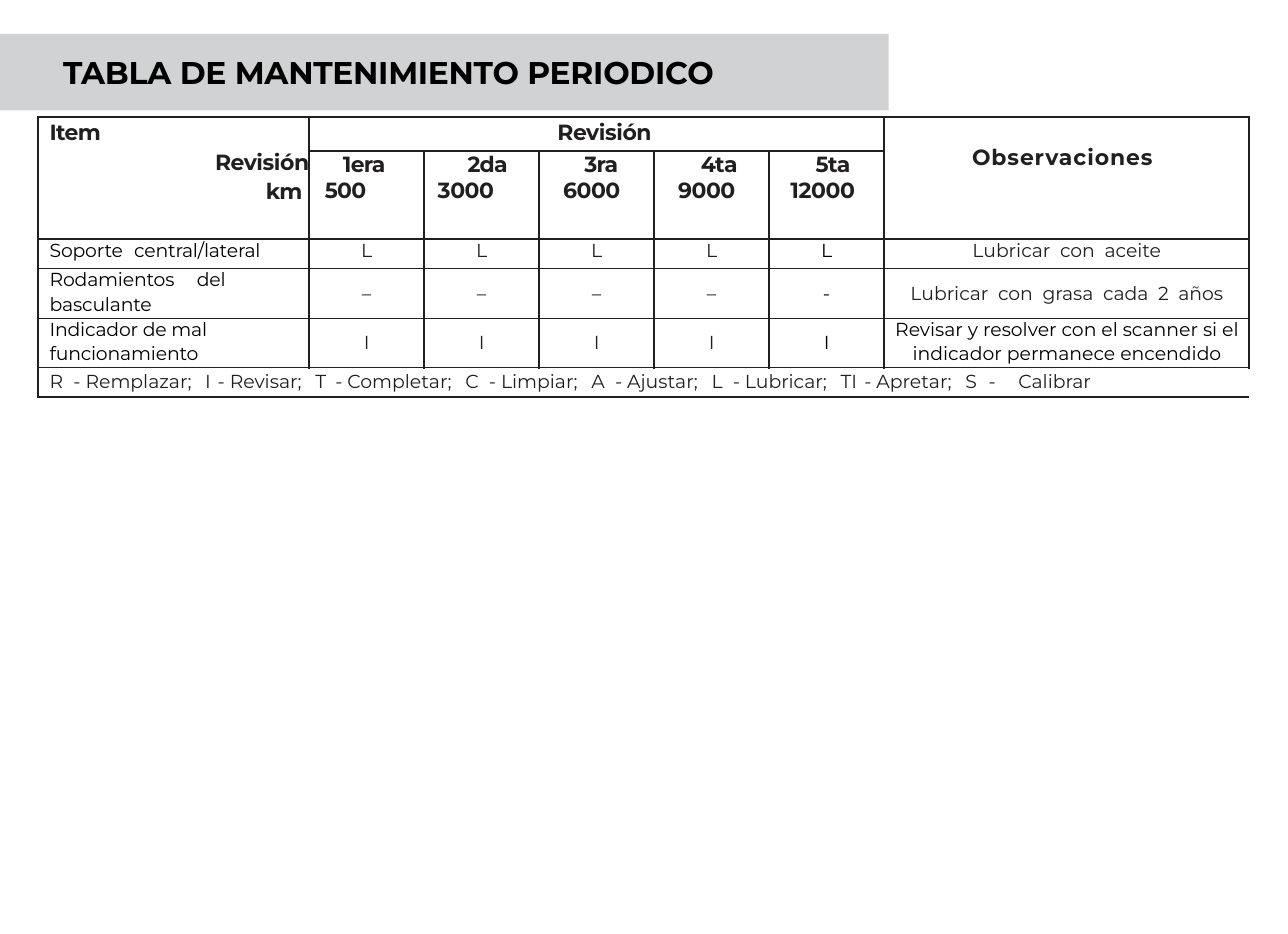
from lxml.etree import SubElement
from pptx import Presentation
from pptx.dml.color import RGBColor
from pptx.enum.shapes import MSO_SHAPE
from pptx.enum.text import MSO_ANCHOR, PP_ALIGN
from pptx.oxml.ns import qn
from pptx.util import Inches, Pt

BLACK = RGBColor(0x00, 0x00, 0x00)
INK = RGBColor(0x22, 0x1F, 0x1F)
BAND_GRAY = RGBColor(0xD1, 0xD2, 0xD3)
FONT = "Montserrat"
NO_GRID_STYLE = "{2D5ABB26-0587-4C30-8999-92F81FD0307C}"
LEFT, CENTER, RIGHT = PP_ALIGN.LEFT, PP_ALIGN.CENTER, PP_ALIGN.RIGHT

W, H = Inches(5.71), Inches(4.14)
COLS = [1.2] + [0.51] * 5 + [1.62]
ROWS = [0.15, 0.38, 0.13, 0.22, 0.22, 0.13]
COL_EDGES = [0.75, 0.75, 0.5, 0.5, 0.75, 0.75, 0.75, 0.75]
ROW_EDGES = [0.75, 0.75, 0.75, 0.5, 0.5, 0.5, 0.5]
MERGES = [((0, 0), (1, 0)), ((0, 1), (0, 5)), ((0, 6), (1, 6)), ((5, 0), (5, 6))]

REVISIONS = [
    ("2da", 0.14, "3000", 0.2),
    ("3ra", 0.16, "6000", 0.15),
    ("4ta", 0.14, "9000", 0.15),
    ("5ta", 0.15, "12000", 0.13),
]
ITEMS = [
    (["Soporte central/lateral"], 2, "LLLLL", ["Lubricar con aceite"], 1.5),
    (["Rodamientos del", "basculante"], 5.6, "––––-",
     ["Lubricar con grasa cada 2 años"], 1.5),
    (["Indicador de mal", "funcionamiento"], 0, "IIIII",
     ["Revisar y resolver con el scanner si el", "indicador permanece encendido"], 0),
]
LEGEND = [
    ("R", 1.7, "Remplazar;"), ("I", 0.6, "Revisar;"), ("T", 1.4, "Completar;"),
    ("C", 1.7, "Limpiar;"), ("A", 1.7, "Ajustar;"), ("L", 1.7, "Lubricar;"),
    ("TI", 0.8, "Apretar;"), ("S", 2.2, "Calibrar"),
]


def spaced(text, gap, spacing=0):
    if not gap:
        return [(text, spacing)]
    first, *rest = text.split(" ")
    runs = [(first, spacing)]
    for word in rest:
        runs += [(" ", gap), (word, spacing)]
    return runs


def write_line(p, runs, size, color=INK, bold=False, align=LEFT, left=0, right=0):
    p.alignment = align
    p.font.name, p.font.size, p.font.bold = FONT, Pt(size), bold
    p.font.color.rgb = color
    pPr = p._p.get_or_add_pPr()
    pPr.set("marL", str(Inches(left)))
    pPr.set("marR", str(Inches(right)))
    pPr.set("indent", "0")
    for text, spacing in runs:
        r = p.add_run()
        r.text = text
        r._r.get_or_add_rPr().set("spc", str(round(spacing * 100)))


def write_cell(cell, lines, size, top=0, before=0, pitch=None, **style):
    cell.margin_top = Inches(top)
    tf = cell.text_frame
    for i, (runs, own) in enumerate(lines):
        p = tf.add_paragraph() if i else tf.paragraphs[0]
        write_line(p, runs, size, **{**style, **own})
        if i:
            p.space_before = Pt(before)
            if pitch:
                p.line_spacing = Pt(pitch)


def draw_edge(cell, side, width):
    ln = SubElement(cell._tc.get_or_add_tcPr(), qn(f"a:ln{side}"), w=str(Pt(width)))
    fill = SubElement(ln, qn("a:solidFill"))
    SubElement(fill, qn("a:srgbClr"), val=str(INK))


def outline(table, row, col):
    origin = table.cell(row, col)
    merged = origin.is_merge_origin
    last_row = row + (origin.span_height if merged else 1) - 1
    last_col = col + (origin.span_width if merged else 1) - 1
    for r in range(row, last_row + 1):
        for c in range(col, last_col + 1):
            cell = table.cell(r, c)
            for side, on_edge, width in (
                ("L", c == col, COL_EDGES[c]),
                ("R", c == last_col, COL_EDGES[c + 1]),
                ("T", r == row, ROW_EDGES[r]),
                ("B", r == last_row, ROW_EDGES[r + 1]),
            ):
                if on_edge:
                    draw_edge(cell, side, width)
            cell.fill.background()


def add_grid(slide):
    frame = slide.shapes.add_table(len(ROWS), len(COLS), Inches(0.17), Inches(0.52),
                                   Inches(sum(COLS)), Inches(sum(ROWS)))
    frame.element.find(".//" + qn("a:tableStyleId")).text = NO_GRID_STYLE
    table = frame.table
    table.first_row = table.horz_banding = False
    for column, width in zip(table.columns, COLS):
        column.width = Inches(width)
    for row, height in zip(table.rows, ROWS):
        row.height = Inches(height)
    for start, end in MERGES:
        table.cell(*start).merge(table.cell(*end))
    for r in range(len(ROWS)):
        for c in range(len(COLS)):
            cell = table.cell(r, c)
            cell.margin_left = cell.margin_right = 0
            cell.margin_top = cell.margin_bottom = 0
            if not cell.is_spanned:
                outline(table, r, c)
    return table


def fill_header(table):
    head = dict(size=7, bold=True)
    write_cell(table.cell(0, 0), [
        ([("Item", -0.2)], dict(left=0.05)),
        ([("Revisión", -0.1)], dict(align=RIGHT)),
        ([("km", -0.2)], dict(align=RIGHT, right=0.03)),
    ], top=0.01, before=0.9, **head)
    write_cell(table.cell(0, 1), [([("Revisión", -0.1)], {})],
               top=0.01, align=CENTER, left=0.07, **head)
    write_cell(table.cell(0, 6), [([("Observaciones", 0.3)], {})],
               top=0.12, left=0.39, **head)
    write_cell(table.cell(1, 1), [
        ([("1era", -0.2)], dict(left=0.15)),
        ([("500", -0.2)], dict(left=0.07)),
    ], **head)
    for col, (name, name_right, km, km_right) in enumerate(REVISIONS, start=2):
        write_cell(table.cell(1, col), [
            ([(name, -0.2)], dict(right=name_right)),
            ([(km, -0.1)], dict(right=km_right)),
        ], align=RIGHT, **head)


def fill_items(table):
    for row, (names, name_gap, marks, notes, note_gap) in enumerate(ITEMS, start=2):
        top = 0.06 if len(names) > 1 else 0
        body = dict(size=6, before=0.9, pitch=6.9)
        write_cell(table.cell(row, 0), [(spaced(n, name_gap, -0.05), {}) for n in names],
                   color=BLACK, left=0.05, **body)
        for col, mark in enumerate(marks, start=1):
            write_cell(table.cell(row, col), [([(mark, 0)], {})], top=top, align=CENTER,
                       color=BLACK if col == 5 else INK, **body)
        write_cell(table.cell(row, 6), [(spaced(n, note_gap), {}) for n in notes],
                   top=0 if len(notes) > 1 else top, align=CENTER,
                   color=BLACK if len(notes) > 1 else INK, **body)


def fill_legend(table):
    runs = []
    for code, gap, action in LEGEND:
        if runs:
            runs.append((" ", 2.8))
        dash_gap = 5.6 if code == "S" else 0
        runs += [(code, 0), (" ", gap), ("-", 0), (" ", dash_gap), (action, 0)]
    write_cell(table.cell(5, 0), [(runs, {})], size=6, top=0.01, left=0.05)


def add_title(slide, text):
    top, height = Inches(0.15), Inches(0.34)
    band = slide.shapes.add_shape(MSO_SHAPE.RECTANGLE, 0, top, int(W * 0.69), height)
    band.shadow.inherit = False
    band.fill.solid()
    band.fill.fore_color.rgb = BAND_GRAY
    band.line.fill.background()
    title = slide.shapes.title
    title.element.addprevious(band.element)
    title.left, title.top, title.width, title.height = Inches(0.28), top, Inches(3.53), height
    tf = title.text_frame
    tf.margin_left = tf.margin_right = tf.margin_top = tf.margin_bottom = 0
    tf.vertical_anchor = MSO_ANCHOR.MIDDLE
    write_line(tf.paragraphs[0], [(text, -0.05)], size=10, color=BLACK, bold=True)


def main():
    prs = Presentation()
    prs.slide_width, prs.slide_height = W, H
    slide = prs.slides.add_slide(prs.slide_layouts[5])
    add_title(slide, "TABLA DE MANTENIMIENTO PERIODICO")
    table = add_grid(slide)
    fill_header(table)
    fill_items(table)
    fill_legend(table)
    prs.save("out.pptx")


if __name__ == "__main__":
    main()
